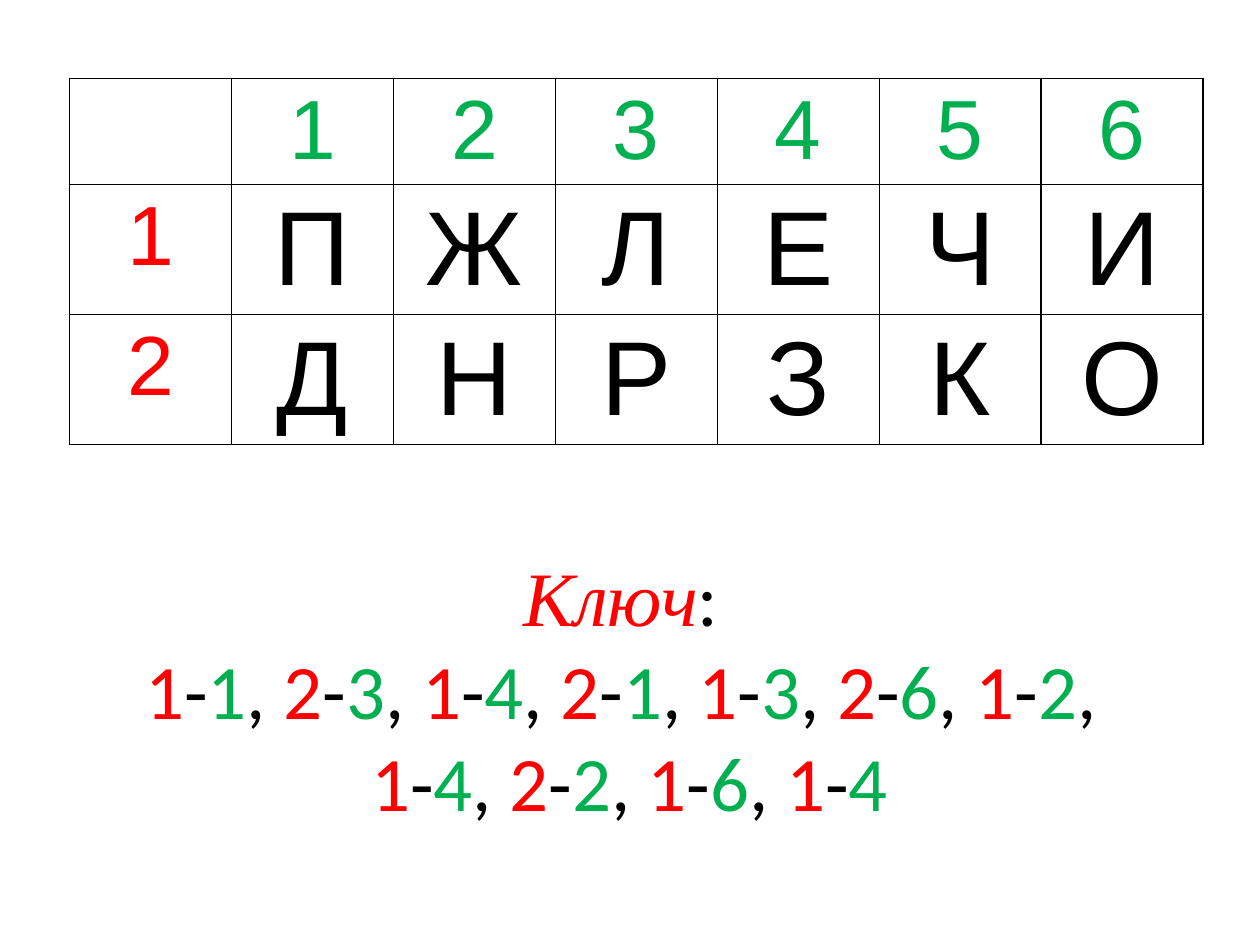
import pptx
import pptx.dml.color
import pptx.enum.text
import pptx.oxml
import pptx.oxml.ns
import pptx.util
from pptx.util import Cm

RED = pptx.dml.color.RGBColor(0xFF, 0x00, 0x00)
GREEN = pptx.dml.color.RGBColor(0x00, 0xB0, 0x50)
BLACK = pptx.dml.color.RGBColor(0x00, 0x00, 0x00)
CENTER = pptx.enum.text.PP_ALIGN.CENTER
MIDDLE = pptx.enum.text.MSO_ANCHOR.MIDDLE
TOP = pptx.enum.text.MSO_ANCHOR.TOP


def add_text(paragraph, text, font="Calibri", size=44, color=BLACK, italic=False):
    paragraph.alignment = CENTER
    run = paragraph.add_run()
    run.text = text
    run.font.name = font
    run.font.size = pptx.util.Pt(size)
    run.font.color.rgb = color
    run.font.italic = italic


def add_borders(cell):
    properties = cell._tc.get_or_add_tcPr()
    for position, side in enumerate(("lnL", "lnR", "lnT", "lnB")):
        border = pptx.oxml.parse_xml(
            f'<a:{side} {pptx.oxml.ns.nsdecls("a")} w="12700"><a:solidFill>'
            f'<a:srgbClr val="{BLACK}"/></a:solidFill></a:{side}>')
        properties.insert(position, border)


presentation = pptx.Presentation()
presentation.slide_width = Cm(25.4)
presentation.slide_height = Cm(19.05)
slide = presentation.slides.add_slide(presentation.slide_layouts[5])

# Cipher table: column numbers, then a row number and its letters
rows = [" 123456", "1ПЖЛЕЧИ", "2ДНРЗКО"]
row_heights = [Cm(2.14), Cm(2.62), Cm(2.62)]
table = slide.shapes.add_table(
    len(rows), len(rows[0]), Cm(1.4), Cm(1.58), Cm(22.86), sum(row_heights)).table
table.first_row = False
table.horz_banding = False
for row, height in zip(table.rows, row_heights):
    row.height = height
for row_index, characters in enumerate(rows):
    for column_index, character in enumerate(characters):
        cell = table.cell(row_index, column_index)
        cell.fill.background()
        cell.margin_top = cell.margin_bottom = Cm(0.1)
        add_borders(cell)
        is_letter = row_index > 0 and column_index > 0
        cell.vertical_anchor = MIDDLE if is_letter else TOP
        color = BLACK if is_letter else GREEN if row_index == 0 else RED
        add_text(cell.text_frame.paragraphs[0], character.strip(), font="Arial",
                 size=60 if is_letter else 48, color=color)

# Key: red row number, green column number
title = slide.shapes.title
title.left, title.top, title.width, title.height = Cm(1.4), Cm(10.31), Cm(22.23), Cm(7.14)
title.text_frame.auto_size = pptx.enum.text.MSO_AUTO_SIZE.NONE
title.text_frame.vertical_anchor = MIDDLE
paragraph = title.text_frame.paragraphs[0]
add_text(paragraph, "Ключ", font="Times New Roman", color=RED, italic=True)
add_text(paragraph, ":")
paragraph.add_line_break()
key_lines = ["1-1, 2-3, 1-4, 2-1, 1-3, 2-6, 1-2,", " 1-4, 2-2, 1-6, 1-4"]
for line_index, line in enumerate(key_lines):
    if line_index > 0:
        paragraph.add_line_break()
    for index, character in enumerate(line):
        if not character.isdigit():
            color = BLACK
        elif line[index + 1:index + 2] == "-":
            color = RED
        else:
            color = GREEN
        add_text(paragraph, character, color=color)

presentation.save("out.pptx")
